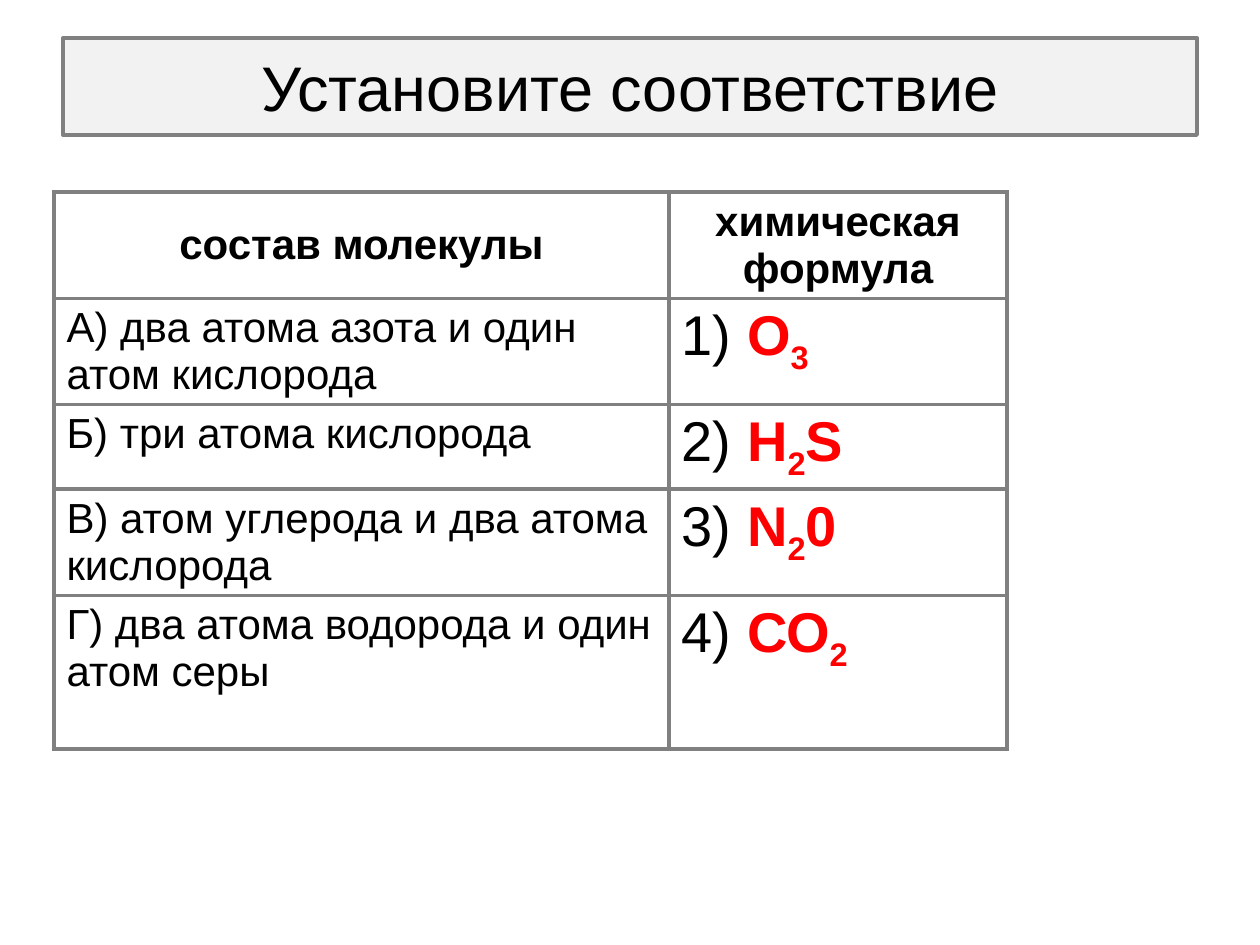
from lxml.etree import SubElement
from pptx import Presentation
from pptx.dml.color import RGBColor
from pptx.enum.text import MSO_ANCHOR as Anchor, PP_ALIGN as Align
from pptx.oxml.ns import qn
from pptx.util import Emu, Pt

PX = 914400 / 126
FONT = "Arial"
LINE_WIDTH = Pt(2.25)
COLORS = {"text": "000000", "formula": "FF0000", "line": "808080",
          "panel": "F2F2F2", "paper": "FFFFFF"}

HEADINGS = ["состав молекулы", "химическая\nформула"]
# Odd parts of a formula split at "_" are subscripts.
MATCHES = [
    ("А) два атома азота и один атом кислорода", "О_3"),
    ("Б) три атома кислорода", "H_2_S"),
    ("В) атом углерода и два атома кислорода", "N_2_0"),
    ("Г) два атома водорода и один атом серы", "СО_2"),
]
COLUMN_WIDTHS = [615, 338]
ROW_HEIGHTS = [106, 106, 84, 106, 154]


def px(n):
    return Emu(round(n * PX))


def rgb(name):
    return RGBColor.from_string(COLORS[name])


def add_run(p, text, size=24, color="text", bold=False, subscript=False):
    r = p.add_run()
    r.text = text
    r.font.name, r.font.size, r.font.bold = FONT, Pt(size), bold
    r.font.color.rgb = rgb(color)
    if subscript:
        r.font._element.set("baseline", "-25000")


class SlideBuilder:
    def __init__(self, prs):
        self.slide = prs.slides.add_slide(prs.slide_layouts[5])

    def title(self, text, x, y, w, h):
        sp = self.slide.shapes.title
        sp.left, sp.top, sp.width, sp.height = map(px, (x, y, w, h))
        sp.fill.solid()
        sp.fill.fore_color.rgb = rgb("panel")
        sp.line.color.rgb = rgb("line")
        sp.line.width = LINE_WIDTH
        tf = sp.text_frame
        tf.vertical_anchor = Anchor.MIDDLE
        p = tf.paragraphs[0]
        p.alignment = Align.CENTER
        add_run(p, text, size=36)

    def table(self, x, y, widths, heights):
        frame = self.slide.shapes.add_table(
            len(heights), len(widths), px(x), px(y),
            px(sum(widths)), px(sum(heights)))
        table = frame.table
        table.first_row = table.horz_banding = False
        for column, width in zip(table.columns, widths):
            column.width = px(width)
        for row, height in zip(table.rows, heights):
            row.height = px(height)
        for cell in table.iter_cells():
            self.style_cell(cell)
        return table

    def style_cell(self, cell):
        tc_pr = cell._tc.get_or_add_tcPr()
        for side in ("lnL", "lnR", "lnT", "lnB"):
            ln = SubElement(tc_pr, qn(f"a:{side}"), w=str(LINE_WIDTH))
            fill = SubElement(ln, qn("a:solidFill"))
            SubElement(fill, qn("a:srgbClr"), val=COLORS["line"])
        cell.fill.solid()
        cell.fill.fore_color.rgb = rgb("paper")

    def heading(self, cell, text):
        cell.vertical_anchor = Anchor.MIDDLE
        tf = cell.text_frame
        for i, line in enumerate(text.split("\n")):
            p = tf.add_paragraph() if i else tf.paragraphs[0]
            p.alignment = Align.CENTER
            add_run(p, line, bold=True)

    def formula(self, cell, number, formula):
        p = cell.text_frame.paragraphs[0]
        add_run(p, f"{number}) ", size=32)
        for i, part in enumerate(formula.split("_")):
            add_run(p, part, size=32, color="formula", bold=True,
                    subscript=i % 2 == 1)


def main():
    prs = Presentation()
    prs.slide_width, prs.slide_height = px(1260), px(945)
    builder = SlideBuilder(prs)
    builder.title("Установите соответствие", 63, 38, 1134, 97)
    table = builder.table(54, 192, COLUMN_WIDTHS, ROW_HEIGHTS)
    for column, text in enumerate(HEADINGS):
        builder.heading(table.cell(0, column), text)
    for row, (molecule, formula) in enumerate(MATCHES, 1):
        add_run(table.cell(row, 0).text_frame.paragraphs[0], molecule)
        builder.formula(table.cell(row, 1), row, formula)
    prs.save("out.pptx")


if __name__ == "__main__":
    main()
